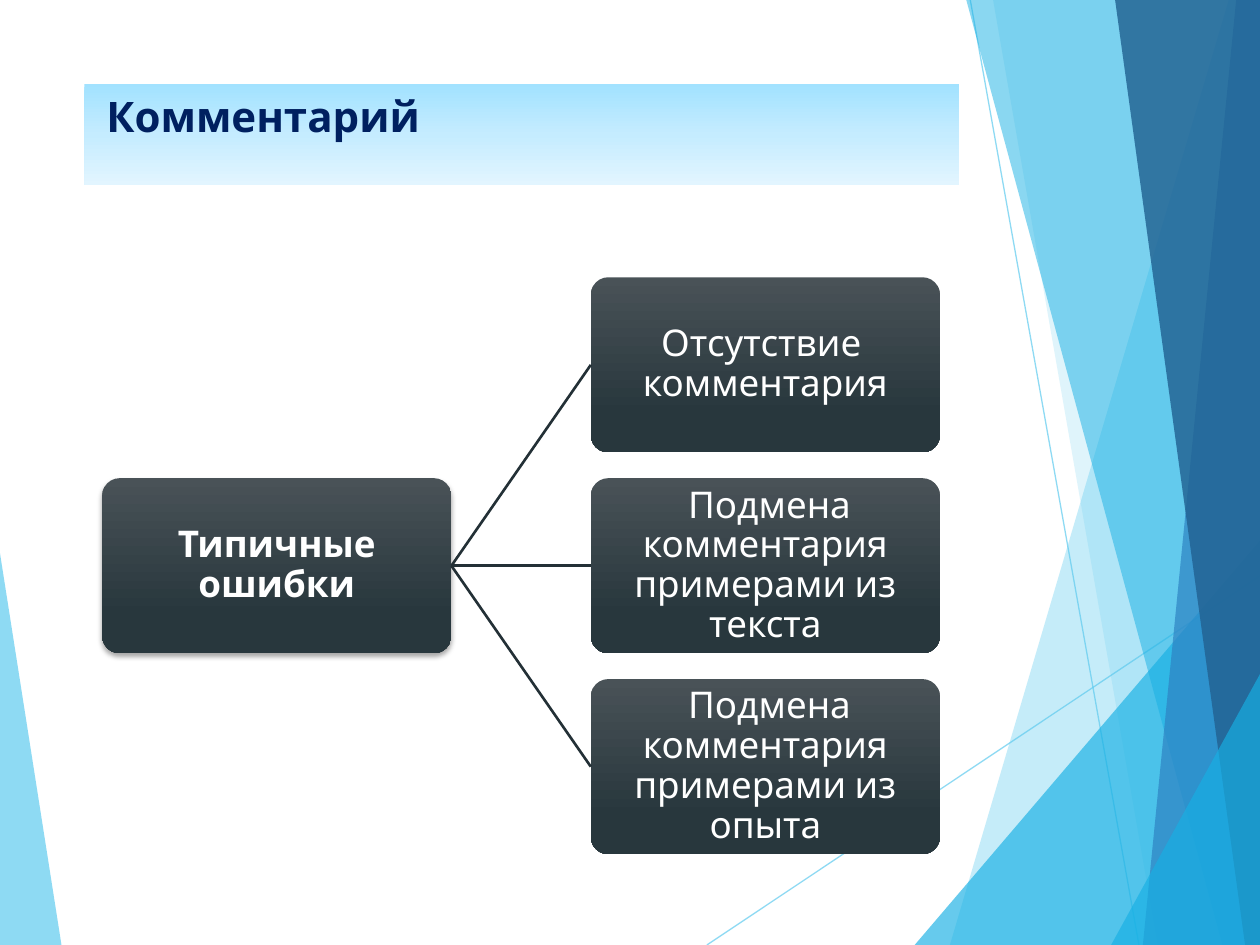
from copy import deepcopy
from lxml.etree import SubElement
from pptx import Presentation
from pptx.dml.color import RGBColor
from pptx.enum.shapes import MSO_CONNECTOR, MSO_SHAPE
from pptx.enum.text import MSO_ANCHOR, PP_ALIGN
from pptx.oxml.ns import qn
from pptx.util import Cm, Pt

WIDE, HIGH = 25.4, 19.05
BOX_W, BOX_H, STEP = 7.04, 3.53, 4.05
ROOT_X, LEAF_X, TOP = 2.06, 11.91, 5.59
SKY, AQUA, BLUE, NAVY = "5FCBEF", "17B0E4", "2E83C3", "226292"


def tint(code):
    return RGBColor.from_string(code)


def fade(item, share):
    color = item._element.spPr.find(".//" + qn("a:srgbClr"))
    SubElement(color, qn("a:alpha"), val=str(share * 1000))


def blend(shape, marks):
    fill = shape.fill
    fill.gradient()
    fill.gradient_angle = 270
    items = shape._element.spPr.find(".//" + qn("a:gsLst"))
    for _ in marks[2:]:
        items.append(deepcopy(items[0]))
    for stop, (place, code) in zip(fill.gradient_stops, marks):
        stop.position = place
        stop.color.rgb = tint(code)


def write(frame, text, size, code, bold):
    part = frame.paragraphs[0]
    run = part.add_run()
    run.text = text
    font = run.font
    font.name, font.size, font.bold = "Cabin", Pt(size), bold
    font.color.rgb = tint(code)
    return part


def add_line(slide, ends, code, width):
    line = slide.shapes.add_connector(
        MSO_CONNECTOR.STRAIGHT, *[Cm(v) for v in ends])
    line.line.color.rgb = tint(code)
    line.line.width = Pt(width)
    SubElement(line._element.spPr, qn("a:effectLst"))
    return line


def add_shard(slide, points, code, share):
    first, *rest = [(x * 100, y * 100) for x, y in points]
    form = slide.shapes.build_freeform(*first, scale=Cm(0.01))
    form.add_line_segments(rest, close=True)
    shard = form.convert_to_shape()
    shard.shadow.inherit = False
    shard.fill.solid()
    shard.fill.fore_color.rgb = tint(code)
    shard.line.fill.background()
    fade(shard, share)


def add_band(slide, top, base, code, share):
    points = [(top, 0), (base, HIGH), (WIDE, HIGH), (WIDE, 0)]
    add_shard(slide, points, code, share)


def add_wedge(slide, base, rise, code, share, edge=WIDE):
    points = [(base, HIGH), (edge, rise), (edge, HIGH)]
    add_shard(slide, points, code, share)


def add_decor(slide):
    add_wedge(slide, 1.24, 11.15, SKY, 70, edge=0)
    for ends in [(14.25, HIGH, WIDE, 11.61), (19.56, 0, 22.96, HIGH)]:
        fade(add_line(slide, ends, SKY, 0.75), 70)
    add_band(slide, 24.77, 19.15, SKY, 36)
    add_band(slide, 20.02, 23.34, SKY, 20)
    add_wedge(slide, 18.44, 10.9, AQUA, 66)
    add_band(slide, 19.48, 24.64, AQUA, 50)
    add_band(slide, 24.92, 23.04, BLUE, 70)
    add_band(slide, 22.48, 25.1, NAVY, 82)
    add_wedge(slide, 22.4, 13.59, AQUA, 66)


def set_title(slide, text):
    title = slide.shapes.title
    slide.shapes._spTree.append(title._element)
    title.left, title.top = Cm(1.7), Cm(1.7)
    title.width, title.height = Cm(17.63), Cm(2.03)
    blend(title, [(0, "A2E2FF"), (0.5, "C5ECFF"), (1, "E2F5FF")])
    title.text_frame.vertical_anchor = MSO_ANCHOR.TOP
    part = write(title.text_frame, text, 24, "002060", True)
    part.alignment = PP_ALIGN.LEFT


def add_box(slide, left, row, text, bold=False):
    box = slide.shapes.add_shape(
        MSO_SHAPE.ROUNDED_RECTANGLE,
        Cm(left), Cm(TOP + row * STEP), Cm(BOX_W), Cm(BOX_H))
    box.adjustments[0] = 0.1
    box.shadow.inherit = False
    box.line.fill.background()
    blend(box, [(0, "495257"), (0.78, "28373D")])
    frame = box.text_frame
    frame.word_wrap = True
    frame.vertical_anchor = MSO_ANCHOR.MIDDLE
    frame.margin_left = frame.margin_right = Cm(0.14)
    frame.margin_top = frame.margin_bottom = Cm(0.14)
    part = write(frame, text, 21, "FFFFFF", bold)
    part.alignment = PP_ALIGN.CENTER
    part.line_spacing = 0.9
    return box


def add_shade(box):
    group = box._element.spPr.find(qn("a:effectLst"))
    shade = SubElement(group, qn("a:outerShdw"), blurRad=str(Pt(3)),
                       dist=str(Pt(2)), dir="5400000", rotWithShape="0")
    color = SubElement(shade, qn("a:srgbClr"), val="000000")
    SubElement(color, qn("a:alpha"), val="35000")


def add_tree(slide, head, leaves):
    root = add_box(slide, ROOT_X, 1, head, True)
    add_shade(root)
    for row, text in enumerate(leaves):
        leaf = add_box(slide, LEAF_X, row, text)
        link = add_line(slide, (0, 0, 1, 1), "233036", 1.5)
        link.begin_connect(root, 3)
        link.end_connect(leaf, 1)


def main():
    deck = Presentation()
    deck.slide_width, deck.slide_height = Cm(WIDE), Cm(HIGH)
    slide = deck.slides.add_slide(deck.slide_layouts[5])
    add_decor(slide)
    set_title(slide, " Комментарий")
    add_tree(slide, "Типичные ошибки", [
        "Отсутствие  комментария",
        " Подмена комментария примерами из текста",
        " Подмена комментария примерами из опыта",
    ])
    deck.save("out.pptx")


if __name__ == "__main__":
    main()
